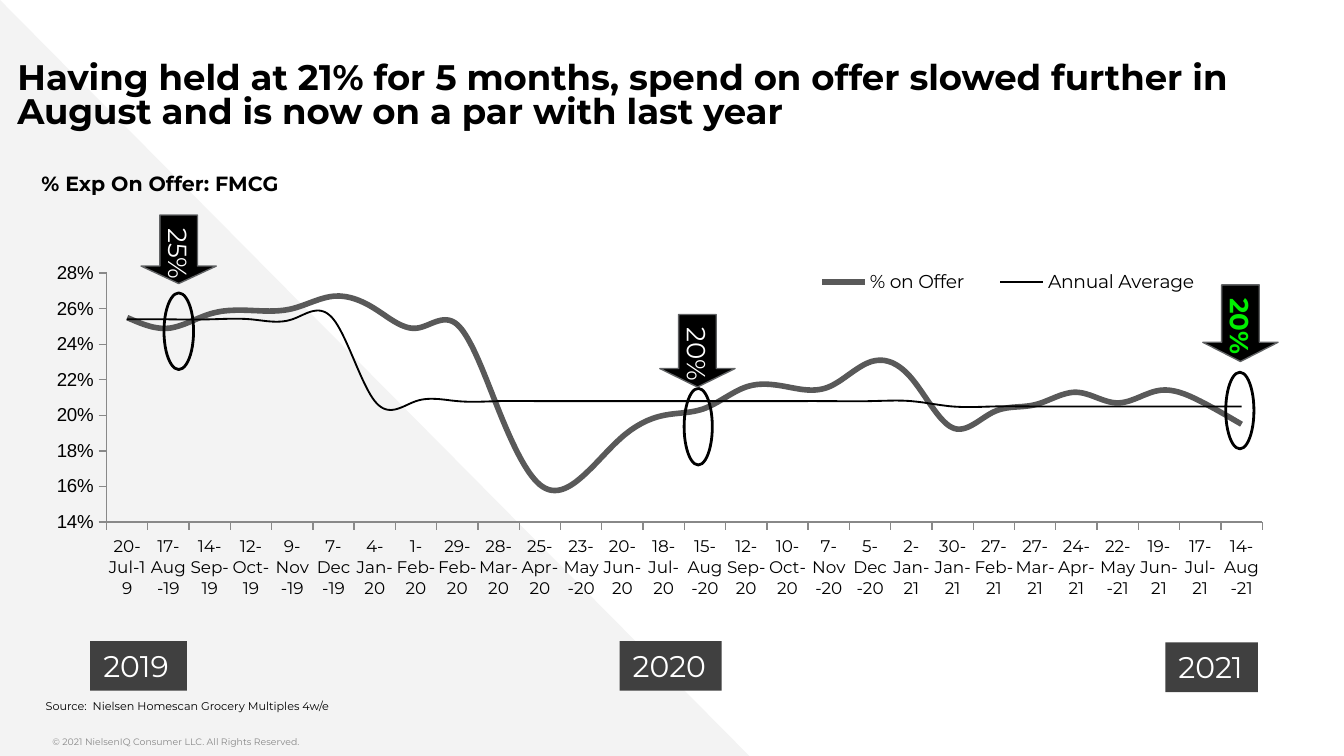
"""Build a slide tracking the share of FMCG spend on offer, 2019 to 2021."""
from lxml.etree import SubElement
from pptx import Presentation
from pptx.chart.data import CategoryChartData
from pptx.dml.color import RGBColor
from pptx.enum.chart import XL_CHART_TYPE as ChartType, XL_LEGEND_POSITION as LegendPosition
from pptx.enum.chart import XL_TICK_LABEL_POSITION as LabelPosition, XL_TICK_MARK as TickMark
from pptx.enum.shapes import MSO_SHAPE as Shape
from pptx.enum.text import MSO_ANCHOR as Anchor, MSO_AUTO_SIZE as AutoSize, PP_ALIGN as Align
from pptx.oxml.ns import qn
from pptx.util import Inches, Pt

FONT = "Montserrat"
COLORS = {
    "black": "000000", "white": "FFFFFF", "backdrop": "F3F3F3", "copyright": "888888",
    "axis": "888888", "offer": "595959", "outline": "616365", "year": "404040",
    "highlight": "00F000",
}
COLORS = {name: RGBColor.from_string(value) for name, value in COLORS.items()}


def add_text(frame, text, size, color, bold=False):
    para = frame.paragraphs[0]
    span = para.add_run()
    span.text = text
    span.font.name = FONT
    span.font.size = Pt(size)
    span.font.bold = bold
    span.font.color.rgb = COLORS[color]
    return para


def set_layout(element, index, bounds, inner=False):
    for old in element.findall(qn("c:layout")):
        element.remove(old)
    layout = SubElement(element, qn("c:layout"))
    element.insert(index, layout)
    manual = SubElement(layout, qn("c:manualLayout"))
    settings = [("layoutTarget", "inner")] if inner else []
    settings += [("xMode", "edge"), ("yMode", "edge"), *zip("xywh", bounds)]
    for tag, value in settings:
        SubElement(manual, qn(f"c:{tag}")).set("val", str(value))


deck = Presentation()
deck.slide_width = Inches(10)
deck.slide_height = deck.slide_width * 9 // 16
page = deck.slides.add_slide(deck.slide_layouts[5])

title = page.shapes.title
title.left, title.top, title.width, title.height = map(Inches, (0.13, 0.37, 9.91, 0.69))
frame = title.text_frame
frame.margin_left = frame.margin_right = 0
frame.margin_top = frame.margin_bottom = Inches(0.1)
frame.vertical_anchor = Anchor.TOP
frame.word_wrap = True
frame.auto_size = AutoSize.NONE
para = add_text(frame, "Having held at 21% for 5 months, spend on offer slowed further in "
                "August and is now on a par with last year", 19, "black", True)
para.alignment = Align.LEFT
para.line_spacing = 0.8

backdrop = page.shapes.add_shape(Shape.RIGHT_TRIANGLE, 0, 0, Inches(5.59), Inches(5.64))
backdrop.shadow.inherit = False
backdrop.fill.solid()
backdrop.fill.fore_color.rgb = COLORS["backdrop"]
backdrop.line.fill.background()
title._element.addprevious(backdrop._element)

data = CategoryChartData(number_format="0.0%")
data.categories = range(43666, 44423, 28)
data.categories.number_format = "d-mmm-yy"
data.add_series("% on Offer", [
    0.255, 0.249, 0.257, 0.259, 0.26, 0.267, 0.26, 0.249, 0.251, 0.203, 0.161, 0.165, 0.188, 0.2,
    0.204, 0.216, 0.216, 0.216, 0.23, 0.221, 0.193, 0.202, 0.206, 0.213, 0.207, 0.214, 0.208, 0.195])
data.add_series("Annual Average", [0.254] * 6 + [0.208] * 14 + [0.205] * 8)
chart = page.shapes.add_chart(
    ChartType.LINE, Inches(0.32), Inches(1.87), Inches(9.45), Inches(3.25), data).chart
chart.has_title = False
chart.font.name = "Arial"
chart.font.size = Pt(18)
chart.font.color.rgb = COLORS["black"]
chart.plots[0].vary_by_categories = False
for series, color, width in zip(chart.plots[0].series, ("offer", "black"), (3, 1)):
    series.smooth = True
    series.format.line.color.rgb = COLORS[color]
    series.format.line.width = Pt(width)

dates, shares = chart.category_axis, chart.value_axis
for axis, font, size, number_format in (
        (dates, FONT, 9, "d-mmm-yy"), (shares, "Arial", 10, "0%")):
    axis.has_major_gridlines = False
    axis.major_tick_mark = TickMark.OUTSIDE
    axis.format.line.color.rgb = COLORS["axis"]
    axis.tick_labels.font.name = font
    axis.tick_labels.font.size = Pt(size)
    axis.tick_labels.font.color.rgb = COLORS["black"]
    axis.tick_labels.number_format = number_format
    axis.tick_labels.number_format_is_linked = False
dates.tick_label_position = LabelPosition.LOW
dates._element.find(qn("c:auto")).set("val", "0")
shares.minimum_scale, shares.maximum_scale, shares.major_unit = 0.14, 0.28, 0.02

chart.has_legend = True
legend = chart.legend
legend.position = LegendPosition.RIGHT
legend.include_in_layout = False
legend.font.name = FONT
legend.font.size = Pt(10)
legend.font.color.rgb = COLORS["black"]
set_layout(legend._element, 1, (0.59, 0.02, 0.34, 0.1))
set_layout(chart._chartSpace.chart.plotArea, 0, (0.05, 0.05, 0.91, 0.57), inner=True)

for text, left, top, width, height, margins, size, color, bold in (
        ("© 2021 NielsenIQ Consumer LLC. All Rights Reserved.",
         0.39, 5.43, 5.54, 0.2, (0, 0.05), 5, "copyright", False),
        ("Source:  Nielsen Homescan Grocery Multiples 4w/e",
         0.22, 5.15, 5, 0.57, (0.12, 0.16), 6, "black", False),
        ("% Exp On Offer: FMCG", 0.21, 1.22, 1.98, 0.29, (0.1, 0.05), 11, "black", True)):
    box = page.shapes.add_textbox(*map(Inches, (left, top, width, height)))
    frame = box.text_frame
    frame.word_wrap = True
    frame.margin_left = Inches(margins[0])
    frame.margin_right = 0
    frame.margin_top = frame.margin_bottom = Inches(margins[1])
    add_text(frame, text, size, color, bold)

for left, top, width in ((1.22, 2.18, 0.22), (5.09, 2.89, 0.21), (9.12, 2.77, 0.21)):
    ring = page.shapes.add_shape(Shape.OVAL, *map(Inches, (left, top, width, 0.57)))
    ring.shadow.inherit = False
    ring.fill.background()
    ring.line.color.rgb = COLORS["black"]
    ring.line.width = Pt(1.5)

for text, left, top, height, color in (
        ("25%", 1.05, 1.6, 0.51, "white"), ("20%", 4.91, 2.34, 0.54, "white"),
        ("20%", 8.95, 2.12, 0.57, "highlight")):
    arrow = page.shapes.add_shape(Shape.DOWN_ARROW, *map(Inches, (left, top, 0.56, height)))
    arrow.adjustments[0], arrow.adjustments[1] = 0.5, 0.255
    arrow.shadow.inherit = False
    arrow.fill.solid()
    arrow.fill.fore_color.rgb = COLORS["black"]
    arrow.line.color.rgb = COLORS["outline"]
    arrow.line.width = Pt(0.75)
    frame = arrow.text_frame
    frame.word_wrap = False
    frame.vertical_anchor = Anchor.MIDDLE
    frame._txBody.bodyPr.set("vert", "eaVert")
    add_text(frame, text, 14, color, color == "highlight").alignment = Align.CENTER

for year, left, top, width in (
        ("2019", 0.67, 4.77, 0.72), ("2020", 4.61, 4.77, 0.76), ("2021", 8.67, 4.78, 0.69)):
    label = page.shapes.add_shape(Shape.RECTANGLE, *map(Inches, (left, top, width, 0.37)))
    label.shadow.inherit = False
    label.fill.solid()
    label.fill.fore_color.rgb = COLORS["year"]
    label.line.fill.background()
    frame = label.text_frame
    frame.word_wrap = False
    frame.auto_size = AutoSize.SHAPE_TO_FIT_TEXT
    frame.vertical_anchor = Anchor.TOP
    add_text(frame, year, 16, "white").alignment = Align.LEFT

deck.save("out.pptx")
